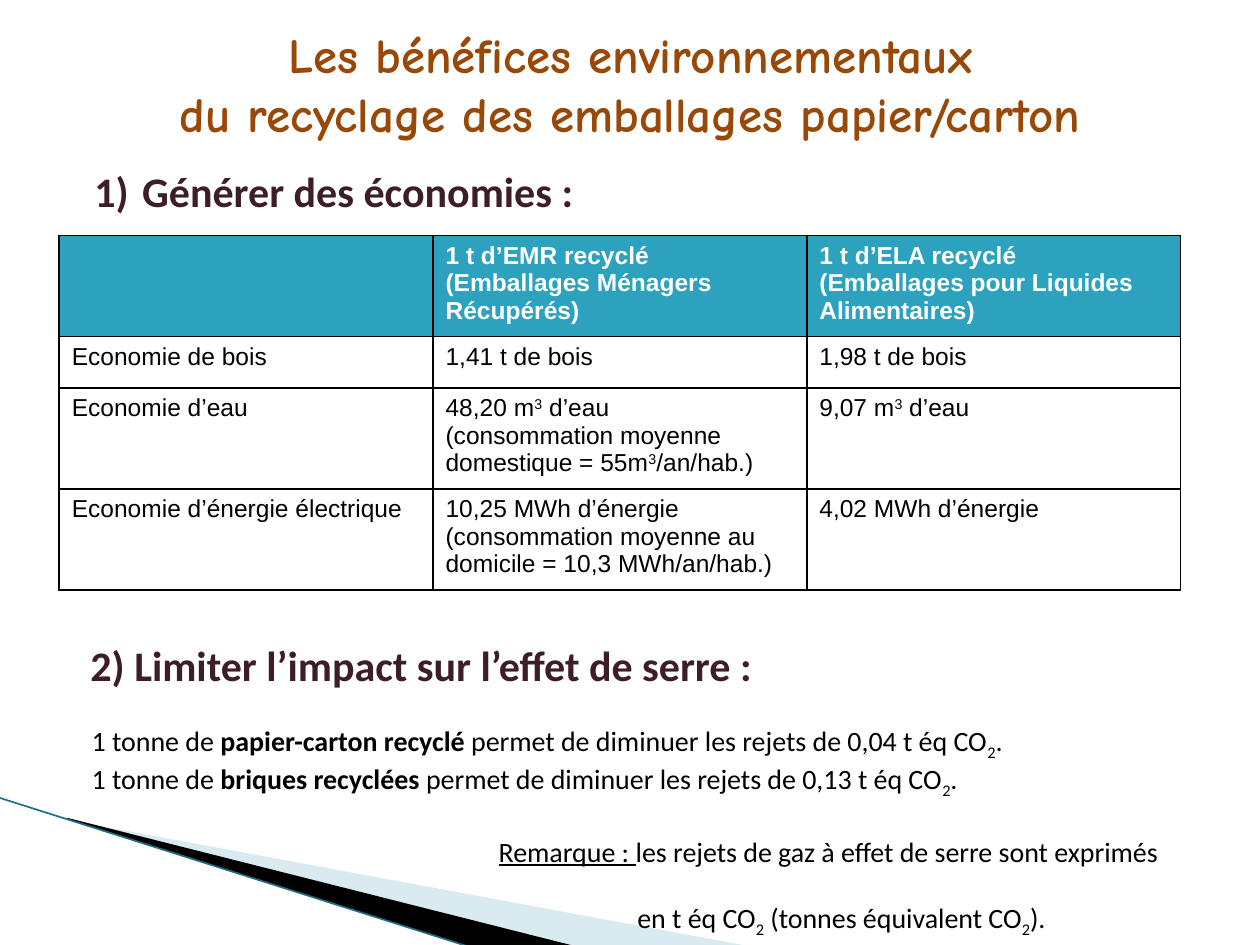
from lxml import etree
from pptx import Presentation
from pptx import util as u
from pptx.dml.color import RGBColor
from pptx.enum import shapes, text
from pptx.oxml.ns import qn

Inches, Pt = u.Inches, u.Pt
BASELINES = {"sup": "30000", "sub": "-25000"}
CUBIC = [("48,20 m", ""), ("3", "sup"), (" d’eau", "")]
ROWS = [
    ["", "1 t d’EMR recyclé (Emballages Ménagers Récupérés)",
     "1 t d’ELA recyclé\v(Emballages pour Liquides Alimentaires)"],
    ["Economie de bois", "1,41 t de bois", "1,98 t de bois"],
    ["Economie d’eau",
     [CUBIC, [("(consommation moyenne domestique = 55m", ""), ("3", "sup"), ("/an/hab.)", "")]],
     [[("9,07 m", ""), ("3", "sup"), (" d’eau", "")]]],
    ["Economie d’énergie électrique",
     [[("10,25 MWh d’énergie", "")],
      [("(consommation moyenne au domicile = 10,3 MWh/an/hab.)", "")]],
     "4,02 MWh d’énergie"],
]
ROW_HEIGHTS = [0.8, 0.41, 0.8, 0.8]


def rgb(value):
    """Turn a hex string into a colour."""
    return RGBColor.from_string(value)


def style_run(r, size, font, color, bold=False):
    """Give a run its font, size, colour and weight."""
    r.font.name, r.font.size, r.font.bold = font, Pt(size), bold
    r.font.color.rgb = rgb(color)


def add_runs(p, parts, size, font, color, bold=False):
    """Add (text, mark) parts to a paragraph; marks are b, u, sup and sub."""
    for words, mark in parts:
        r = p.add_run()
        r.text = words
        style_run(r, size, font, color, bold or mark == "b")
        if mark == "u":
            r.font.underline = True
        if mark in BASELINES:
            r.font._element.set("baseline", BASELINES[mark])


def indent(p, left, first=0.0):
    """Set the left margin and first-line indent of a paragraph."""
    pPr = p._p.get_or_add_pPr()
    pPr.set("marL", str(Inches(left)))
    pPr.set("indent", str(Inches(first)))
    return pPr


def add_text_frame(s, box, anchor=text.MSO_ANCHOR.MIDDLE):
    """Add a wrapping text box and return its text frame."""
    tf = s.shapes.add_textbox(*map(Inches, box)).text_frame
    tf.word_wrap = True
    tf.vertical_anchor = anchor
    return tf


def set_frame(sp, box):
    """Give an outline a frame of its own while its points stay in place."""
    left, top, width, height = map(Inches, box)
    outline = sp._element.find(".//" + qn("a:path"))
    for pt in outline.iter(qn("a:pt")):
        pt.set("x", str(int(pt.get("x")) + sp.left - left))
        pt.set("y", str(int(pt.get("y")) + sp.top - top))
    outline.set("w", str(width))
    outline.set("h", str(height))
    sp.left, sp.top, sp.width, sp.height = left, top, width, height


def add_wedge(s, box, points, color, alpha=None):
    """Draw a filled outline through points in inches, framed by the box."""
    start, *rest = [(Inches(x), Inches(y)) for x, y in points]
    builder = s.shapes.build_freeform(*start)
    builder.add_line_segments(rest)
    sp = builder.convert_to_shape()
    set_frame(sp, box)
    sp.shadow.inherit = False
    sp.line.fill.background()
    sp.fill.solid()
    sp.fill.fore_color.rgb = rgb(color)
    if alpha:
        clr = sp.fill._xPr.find(".//" + qn("a:srgbClr"))
        etree.SubElement(clr, qn("a:alpha"), val=str(alpha * 1000))


def add_corner(s, box):
    """Draw the swoosh in the lower left corner."""
    x, y, w, h = box
    bottom = y + h
    add_wedge(s, (x + 0.78, y - 0.86, 4.16, 1.58),
              [(x + 0.55, y + 0.18), (x + 5.95, bottom), (x + 4.56, bottom),
               (x + 0.55, y + 0.17)], "A0CBDC", 40)
    add_wedge(s, (x - 0.06, y, 4.16, 0.92),
              [(x + 0.53, y + 0.16), (x + 4.57, bottom), (x + 3.72, bottom),
               (x + 0.54, y + 0.17)], "000000")
    line = s.shapes.add_connector(shapes.MSO_CONNECTOR.STRAIGHT,
                                  *map(Inches, (x - 0.01, y, x + 3.71, bottom)))
    line.line.color.rgb = rgb("1F6F84")
    line.line.width = Pt(0.95)
    etree.SubElement(line._element.spPr, qn("a:effectLst"))


def add_title(s, box):
    """Write the two-line title."""
    p = add_text_frame(s, box).paragraphs[0]
    p.text = "Les bénéfices environnementaux\vdu recyclage des emballages papier/carton"
    p.alignment = text.PP_ALIGN.CENTER
    for r in p.runs:
        style_run(r, 28, "Comic Neue", "984807", True)


def add_savings_heading(s, box):
    """Write the first, numbered heading."""
    p = add_text_frame(s, box).paragraphs[0]
    etree.SubElement(indent(p, 0.56, -0.38), qn("a:buAutoNum"), type="arabicParenR")
    add_runs(p, [("Générer des économies :", "")], 24, "Calibri", "3E1E25", True)


def add_borders(cell):
    """Draw a black one-point border on each side of a cell."""
    tcPr = cell._tc.get_or_add_tcPr()
    for side in ("lnL", "lnR", "lnT", "lnB"):
        ln = etree.SubElement(tcPr, qn("a:" + side), w=str(Pt(1)))
        fill = etree.SubElement(ln, qn("a:solidFill"))
        etree.SubElement(fill, qn("a:srgbClr"), val="000000")


def fill_cell(cell, content, header):
    """Write and format one table cell."""
    add_borders(cell)
    cell.fill.solid()
    cell.fill.fore_color.rgb = rgb("2DA2BF" if header else "FFFFFF")
    tf = cell.text_frame
    color = "FFFFFF" if header else "000000"
    if isinstance(content, str):
        tf.text = content
        for r in tf.paragraphs[0].runs:
            style_run(r, 14, "Arial", color, header)
        return
    for i, parts in enumerate(content):
        p = tf.add_paragraph() if i else tf.paragraphs[0]
        add_runs(p, parts, 14, "Arial", color, header)


def add_savings_table(s, box):
    """Build the table of savings per tonne recycled."""
    table = s.shapes.add_table(len(ROWS), len(ROWS[0]), *map(Inches, box)).table
    table.horz_banding = False
    for column in table.columns:
        column.width = Inches(box[2] / len(ROWS[0]))
    for i, (row, height) in enumerate(zip(ROWS, ROW_HEIGHTS)):
        table.rows[i].height = Inches(height)
        for j, content in enumerate(row):
            fill_cell(table.cell(i, j), content, i == 0)


def add_greenhouse(s, box):
    """Write the second heading, its two facts and the remark."""
    tf = add_text_frame(s, box, text.MSO_ANCHOR.TOP)
    p = tf.paragraphs[0]
    indent(p, 0.57, -0.38)
    add_runs(p, [("2) Limiter l’impact sur l’effet de serre :", "")],
             24, "Calibri", "3E1E25", True)
    facts = [
        [("1 tonne de ", ""), (material, "b"),
         (f" permet de diminuer les rejets de {amount} t éq CO", ""), ("2", "sub"), (".", "")]
        for material, amount in [("papier-carton recyclé", "0,04"), ("briques recyclées", "0,13")]
    ]
    remark = [("Remarque : ", "u"), ("les rejets de gaz à effet de serre sont exprimés", "")]
    unit = [("en t éq CO", ""), ("2", "sub"), (" (tonnes équivalent CO", ""),
            ("2", "sub"), (").", "")]
    for parts, left, first, before in [(facts[0], 0.2, 0, 19), (facts[1], 0.2, 0, 0),
                                       (remark, 4.42, -0.99, 19.5), (unit, 4.53, 0, 19)]:
        p = tf.add_paragraph()
        indent(p, left, first)
        p.space_before = Pt(before)
        add_runs(p, parts, 16, "Calibri", "000000")


def main():
    """Build and save the slide."""
    prs = Presentation()
    prs.slide_width, prs.slide_height = Inches(10), Inches(7.5)
    s = prs.slides.add_slide(prs.slide_layouts[6])
    add_corner(s, (0, 6.33, 10, 1.18))
    add_title(s, (0, 0.23, 10, 0.86))
    add_savings_heading(s, (0.47, 1.26, 8.55, 0.5))
    add_savings_table(s, (0.47, 1.87, 8.9, sum(ROW_HEIGHTS)))
    add_greenhouse(s, (0.43, 5.03, 8.94, 2.45))
    prs.save("out.pptx")


if __name__ == "__main__":
    main()
